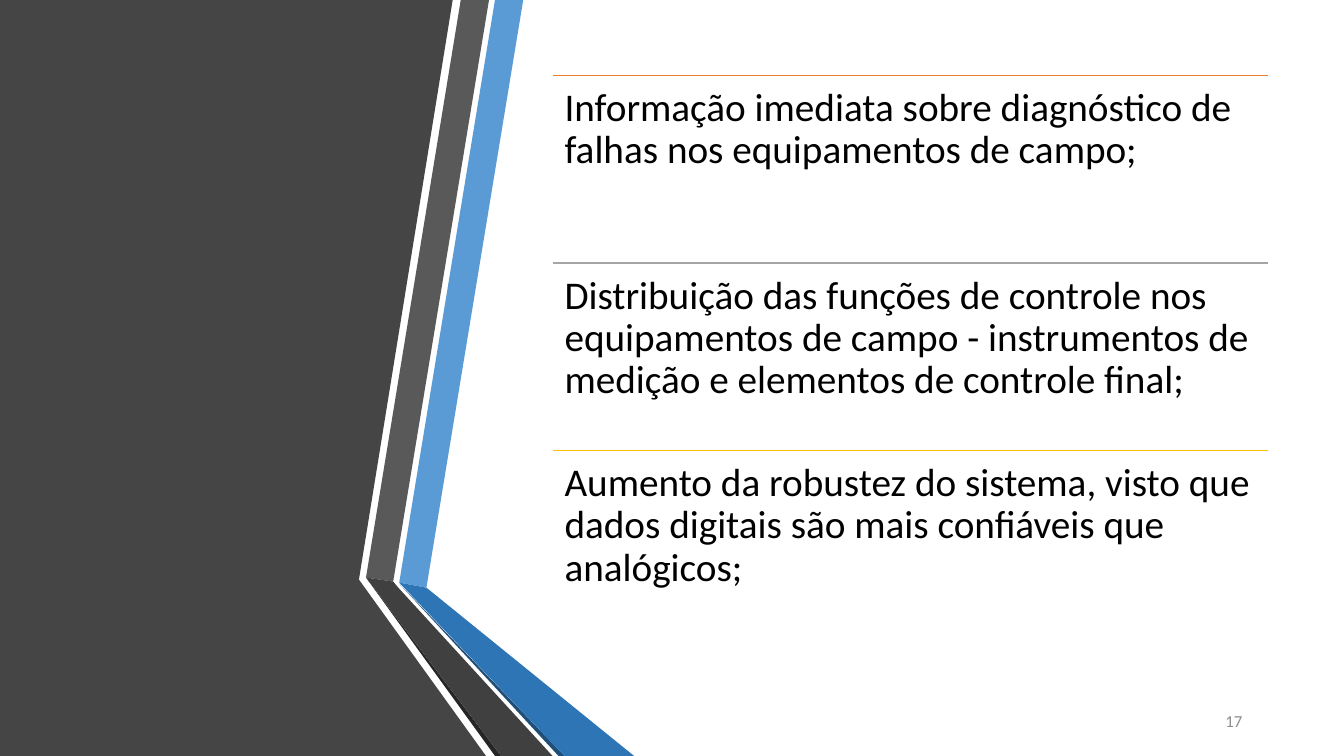
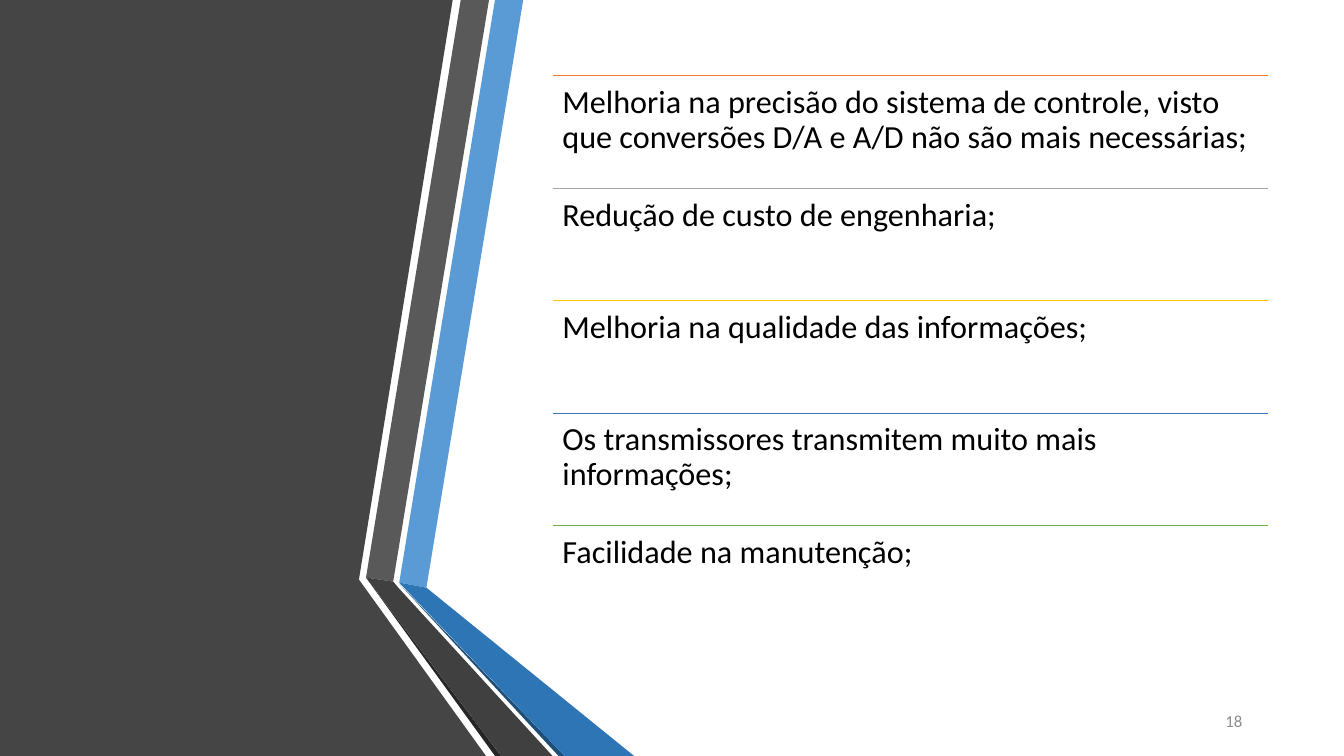
from dataclasses import dataclass

from lxml.etree import SubElement
from pptx import Presentation
from pptx.dml.color import RGBColor
from pptx.enum.text import MSO_ANCHOR, PP_ALIGN
from pptx.oxml.ns import qn
from pptx.util import Inches, Pt


@dataclass(frozen=True)
class Theme:
    font: str = "Calibri"
    text: str = "000000"
    muted: str = "8C8C8C"
    rules: tuple = ("ED7D31", "A5A5A5", "FFC000", "4472C4", "70AD47")
    number_size: int = 12


THEME = Theme()
WIDTH, HEIGHT = 13.33, 7.5
LEFT, TOP, LIST_W, LIST_H = 5.48, 0.75, 7.1, 5.58

SLIDES = [
    dict(number=17, size=28, inset=0.12, rule=1, items=[
        "Informação imediata sobre diagnóstico de falhas nos equipamentos de campo;",
        "Distribuição das funções de controle nos equipamentos de campo - instrumentos de medição "
        "e elementos de controle final;",
        "Aumento da robustez do sistema, visto que dados digitais são mais confiáveis que analógicos;",
    ]),
    dict(number=18, size=23, inset=0.1, rule=0.5, items=[
        "Melhoria na precisão do sistema de controle, visto que conversões D/A e A/D não são mais "
        "necessárias;",
        "Redução de custo de engenharia;",
        "Melhoria na qualidade das informações;",
        "Os transmissores transmitem muito mais informações;",
        "Facilidade na manutenção;",
    ]),
]

BANDS = [
    ("454545", [(0, 0), (4.49, 0), (3.56, 5.75), (4.82, HEIGHT), (0, HEIGHT)]),
    ("5B9BD5", [(3.96, 5.78), (4.23, 5.83), (5.19, 0), (4.91, 0)]),
    ("595959", [(4.85, 0), (4.57, 0), (3.63, 5.73), (3.9, 5.77)]),
    ("262626", [(3.63, 5.73), (4.91, HEIGHT), (4.97, HEIGHT)]),
    ("1F4E79", [(3.96, 5.79), (5.54, HEIGHT), (5.6, HEIGHT)]),
    ("2E75B6", [(3.96, 5.78), (5.6, HEIGHT), (6.29, HEIGHT), (4.23, 5.83)]),
    ("404040", [(3.63, 5.73), (4.97, HEIGHT), (5.48, HEIGHT), (3.95, 5.83), (3.9, 5.77)]),
]


def add_band(s, color, points):
    start, *rest = [(Inches(x), Inches(y)) for x, y in points]
    builder = s.shapes.build_freeform(*start)
    builder.add_line_segments(rest, close=True)
    sp = builder.convert_to_shape()
    sp.shadow.inherit = False
    sp.fill.solid()
    sp.fill.fore_color.rgb = RGBColor.from_string(color)
    sp.line.fill.background()


def add_rule(s, y, color, weight):
    line = s.shapes.add_connector(1, Inches(LEFT), Inches(y), Inches(LEFT + LIST_W), Inches(y))
    line.line.color.rgb = RGBColor.from_string(color)
    line.line.width = Pt(weight)
    SubElement(line._element.spPr, qn("a:effectLst"))


def add_text(s, text, x, y, w, h, *, size, color=THEME.text, inset=None,
             align=PP_ALIGN.LEFT, anchor=MSO_ANCHOR.TOP, spacing=None):
    tf = s.shapes.add_textbox(Inches(x), Inches(y), Inches(w), Inches(h)).text_frame
    tf.word_wrap = True
    tf.vertical_anchor = anchor
    if inset is not None:
        tf.margin_left = tf.margin_right = tf.margin_top = tf.margin_bottom = Inches(inset)
    p = tf.paragraphs[0]
    p.alignment = align
    p.line_spacing = spacing
    r = p.add_run()
    r.text = text
    r.font.name = THEME.font
    r.font.size = Pt(size)
    r.font.color.rgb = RGBColor.from_string(color)


def add_list(s, items, size, inset, rule):
    row_h = LIST_H / len(items)
    for i, (item, color) in enumerate(zip(items, THEME.rules)):
        y = TOP + i * row_h
        add_rule(s, y, color, rule)
        add_text(s, item, LEFT, y, LIST_W, row_h, size=size, inset=inset, spacing=0.9)


def main():
    prs = Presentation()
    prs.slide_width, prs.slide_height = Inches(WIDTH), Inches(HEIGHT)
    for content in SLIDES:
        s = prs.slides.add_slide(prs.slide_layouts[6])
        for color, points in BANDS:
            add_band(s, color, points)
        add_list(s, content["items"], content["size"], content["inset"], content["rule"])
        add_text(s, str(content["number"]), 9.42, 6.95, 3, 0.4, size=THEME.number_size,
                 color=THEME.muted, align=PP_ALIGN.RIGHT, anchor=MSO_ANCHOR.MIDDLE)
    prs.save("out.pptx")


if __name__ == "__main__":
    main()
